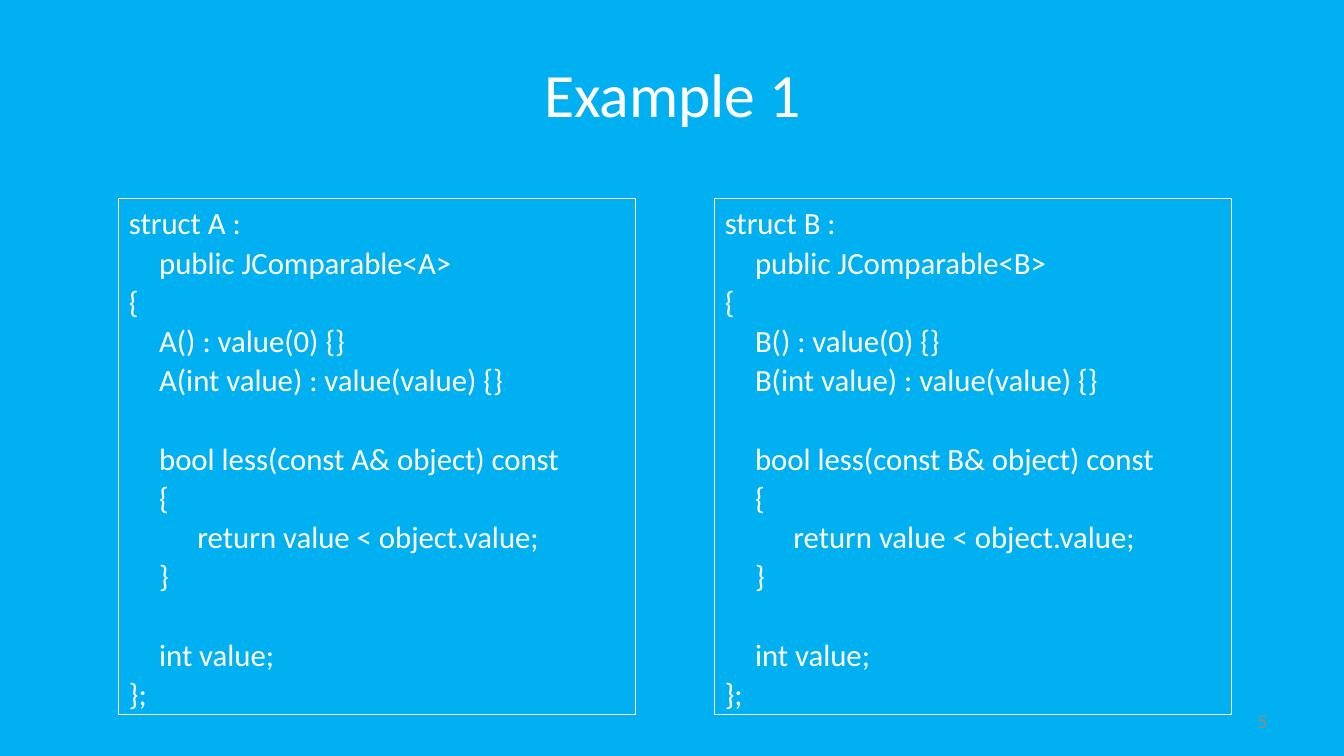
from dataclasses import dataclass

from pptx import Presentation
from pptx.dml.color import RGBColor
from pptx.enum.shapes import MSO_SHAPE
from pptx.enum.text import MSO_ANCHOR, PP_ALIGN
from pptx.util import Inches, Pt


@dataclass(frozen=True)
class Theme:
    font: str = "Calibri"
    background: RGBColor = RGBColor(0x00, 0xB0, 0xF0)
    white: RGBColor = RGBColor(0xFF, 0xFF, 0xFF)
    grey: RGBColor = RGBColor(0x8C, 0x8C, 0x8C)
    title_size: Pt = Pt(44)
    code_size: Pt = Pt(22)
    code_line: Pt = Pt(28)
    number_size: Pt = Pt(14)


theme = Theme()


def add_text(p, text, *, size, color=theme.white, align=PP_ALIGN.LEFT):
    p.alignment = align
    r = p.add_run()
    r.text = text
    r.font.name = theme.font
    r.font.size = size
    r.font.color.rgb = color


prs = Presentation()
prs.slide_width, prs.slide_height = Inches(13.33), Inches(7.5)
slide = prs.slides.add_slide(prs.slide_layouts[6])
slide.background.fill.solid()
slide.background.fill.fore_color.rgb = theme.background

# Title and slide number
labels = [
    ("Example 1", (0.67, 0.3, 12, 1.25), theme.title_size, theme.white, PP_ALIGN.CENTER),
    ("5", (9.56, 6.95, 3.11, 0.4), theme.number_size, theme.grey, PP_ALIGN.RIGHT),
]
for text, box, size, color, align in labels:
    tf = slide.shapes.add_textbox(*map(Inches, box)).text_frame
    tf.word_wrap = True
    tf.vertical_anchor = MSO_ANCHOR.MIDDLE
    add_text(tf.paragraphs[0], text, size=size, color=color, align=align)

# Code lines: indent level, empty line above, text
indents = [0, 0.3, 0.68]
code = [
    (0, False, "struct {name} :"),
    (1, False, "public JComparable<{name}>"),
    (0, False, "{{"),
    (1, False, "{name}() : value(0) {{}}"),
    (1, False, "{name}(int value) : value(value) {{}}"),
    (1, True, "bool less(const {name}& object) const"),
    (1, False, "{{"),
    (2, False, "return value < object.value;"),
    (1, False, "}}"),
    (1, True, "int value;"),
    (0, False, "}};"),
]

# Code boxes
box_side = 5.12
for name, left in (("A", 1.18), ("B", 7.09)):
    sp = slide.shapes.add_shape(MSO_SHAPE.RECTANGLE, Inches(left), Inches(1.97),
                                Inches(box_side), Inches(box_side))
    sp.shadow.inherit = False
    sp.fill.background()
    sp.line.color.rgb = theme.white
    sp.line.width = Pt(0.75)
    tf = sp.text_frame
    tf.word_wrap = True
    tf.vertical_anchor = MSO_ANCHOR.MIDDLE
    for i, (level, gap, line) in enumerate(code):
        p = tf.add_paragraph() if i else tf.paragraphs[0]
        p.line_spacing = theme.code_line
        p.space_before = theme.code_line if gap else Pt(0)
        add_text(p, line.format(name=name), size=theme.code_size)
        pPr = p._p.get_or_add_pPr()
        pPr.set("marL", str(Inches(indents[level])))
        pPr.set("indent", "0")

prs.save("out.pptx")
